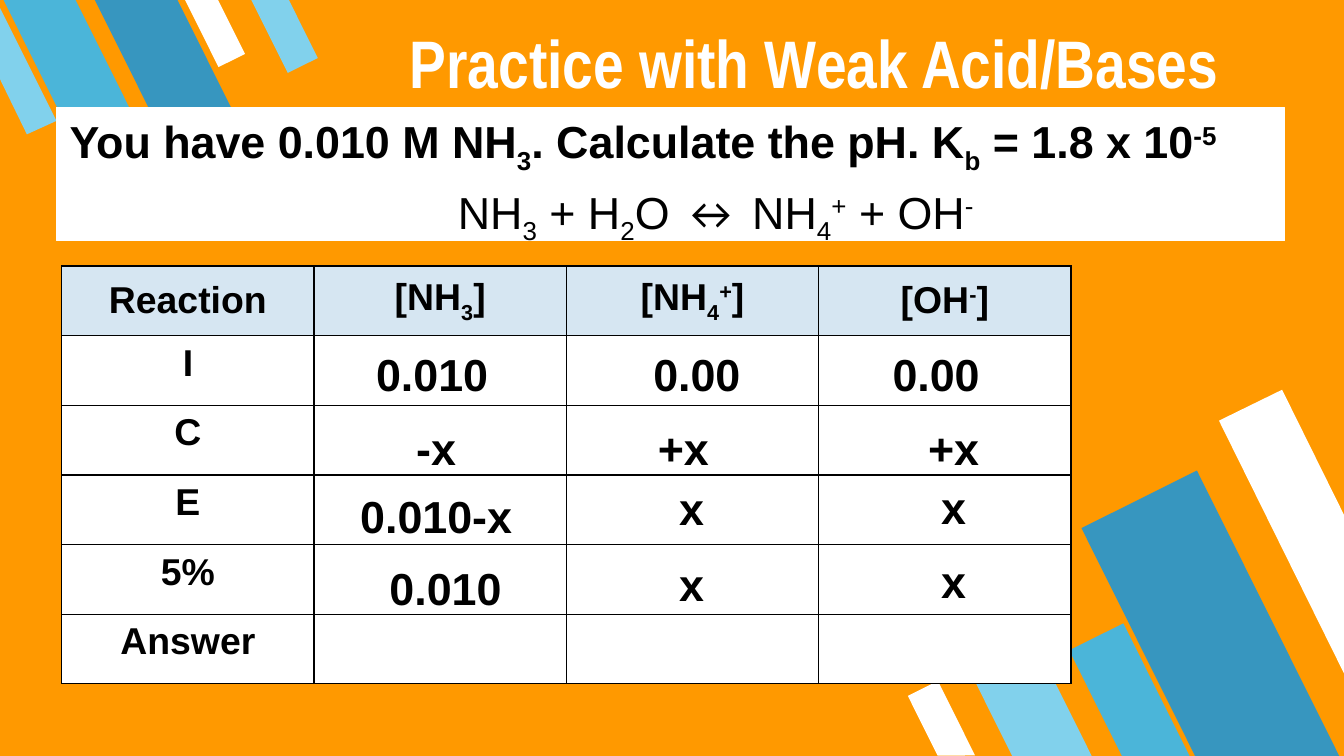
from lxml import etree
from pptx import Presentation
from pptx import util as u
from pptx.dml import color
from pptx.enum import shapes, text
from pptx.oxml import ns

COLORS = {
    "background": "FF9900", "white": "FFFFFF", "black": "000000",
    "header": "D6E6F2", "light": "81D1EC", "medium": "4BB5D9", "dark": "3796BF",
}
BODY = {"name": "Arial", "size": u.Pt(24), "bold": True}
PLAIN = {**BODY, "bold": False}
LABEL = {**BODY, "size": u.Pt(20)}
TITLE = {"name": "Arial Narrow", "size": u.Pt(36), "bold": True}
SUB, SUPER = -25, 30

QUESTION = [("You have 0.010 M NH", 0), ("3", SUB), (". Calculate the pH. K", 0),
            ("b", SUB), (" = 1.8 x 10", 0), ("-5", SUPER)]
EQUATION = [("NH", 0), ("3", SUB), (" + H", 0), ("2", SUB), ("O ", 0),
            ("↔", 0, "Calibri"), (" NH", 0), ("4", SUB), ("+", SUPER),
            (" + OH", 0), ("-", SUPER)]
HEADERS = [
    [("Reaction", 0)],
    [("[NH", 0), ("3", SUB), ("]", 0)],
    [("[NH", 0), ("4", SUB), ("+", SUPER), ("]", 0)],
    [("[OH", 0), ("-", SUPER), ("]", 0)],
]
ROW_LABELS = ["I", "C", "E", "5%", "Answer"]
ENTRIES = [
    [("0.010", 1.98, 0.55), ("0.00", 3.95, 0.55), ("0.00", 5.73, 0.55)],
    [("-x", 2.01, 1.1), ("+x", 3.85, 1.1), ("+x", 5.86, 1.1)],
    [("0.010-x", 2.01, 1.61), ("x", 3.91, 1.55), ("x", 5.86, 1.54)],
    [("0.010", 2.08, 2.14), ("x", 3.91, 2.11), ("x", 5.86, 2.09)],
]
LOWER_BARS = [
    (0.45, 1.6, 0.53, 1.32, "light"), (1.65, 0.69, 0.96, 2.39, "dark"),
    (1.3, 1.78, 0.45, 1.11, "medium"), (0, 2.19, 0.25, 0.62, "white"),
]
LOWER_EDGE = [(2.66, 0), (2.19, 0.23), (3.12, 2.11), (3.12, 0.93)]
UPPER_BARS = [
    (1.49, -0.08, 0.22, 0.56, "white"), (0.26, -0.18, 0.48, 1.18, "medium"),
    (0.98, -0.2, 0.55, 1.37, "dark"), (1.99, -0.1, 0.25, 0.62, "light"),
]
UPPER_EDGE = [(0.2, 1), (0.42, 0.9), (0, 0.06), (0, 0.59)]


def rgb(name):
    return color.RGBColor.from_string(COLORS[name])


def box_of(*lengths):
    return [u.Inches(length) for length in lengths]


def paint(shape, fill):
    shape.shadow.inherit = False
    shape.fill.solid()
    shape.fill.fore_color.rgb = rgb(fill)
    shape.line.fill.background()


def write(paragraph, runs, style, ink="black", align=text.PP_ALIGN.CENTER):
    paragraph.alignment = align
    for words, baseline, *font_name in runs:
        run = paragraph.add_run()
        run.text = words
        for attribute, value in style.items():
            setattr(run.font, attribute, value)
        run.font.color.rgb = rgb(ink)
        if font_name:
            run.font.name = font_name[0]
        if baseline:
            run._r.get_or_add_rPr().set("baseline", str(baseline * 1000))


def add_stripes(slide, left, top, rotation, bars, edge, edge_fill):
    for x, y, width, height, fill in bars:
        bar = slide.shapes.add_shape(
            shapes.MSO_SHAPE.FLOWCHART_MANUAL_INPUT,
            *box_of(left + x, top + y, width, height))
        bar.rotation = rotation
        bar._element.spPr.xfrm.set("flipH", "1")
        paint(bar, fill)
    points = [box_of(left + x, top + y) for x, y in edge]
    builder = slide.shapes.build_freeform(*points[0])
    builder.add_line_segments(points[1:], close=True)
    paint(builder.convert_to_shape(), edge_fill)


def add_title(slide, left, top, width, height):
    title = slide.shapes.title
    title.left, title.top, title.width, title.height = box_of(left, top, width, height)
    frame = title.text_frame
    frame.word_wrap = True
    frame.auto_size = text.MSO_AUTO_SIZE.NONE
    frame.vertical_anchor = text.MSO_ANCHOR.BOTTOM
    margins = {"left": 0.1, "top": 0.1, "right": 0.1, "bottom": 0.04}
    for side, margin in margins.items():
        setattr(frame, f"margin_{side}", u.Inches(margin))
    write(frame.paragraphs[0], [("Practice with Weak Acid/Bases", 0)],
          TITLE, "white", text.PP_ALIGN.LEFT)


def add_question(slide, left, top, width, height):
    panel = slide.shapes.add_shape(
        shapes.MSO_SHAPE.RECTANGLE, *box_of(left, top, width, height))
    paint(panel, "white")
    panel.line.color.rgb = rgb("white")
    panel.line.width = u.Pt(0.75)
    frame = panel.text_frame
    frame.word_wrap = True
    frame.vertical_anchor = text.MSO_ANCHOR.TOP
    question, equation = frame.paragraphs[0], frame.add_paragraph()
    for paragraph, indent in ((question, -0.67), (equation, 0)):
        properties = paragraph._p.get_or_add_pPr()
        properties.set("marL", str(u.Inches(0.67)))
        properties.set("indent", str(u.Inches(indent)))
    write(question, QUESTION, BODY, align=text.PP_ALIGN.LEFT)
    equation.space_before = u.Pt(5)
    write(equation, EQUATION, PLAIN)


def format_cell(cell, fill):
    properties = cell._tc.get_or_add_tcPr()
    for side in ("lnL", "lnR", "lnT", "lnB"):
        border = etree.SubElement(properties, ns.qn(f"a:{side}"), w=str(u.Pt(0.75)))
        solid = etree.SubElement(border, ns.qn("a:solidFill"))
        etree.SubElement(solid, ns.qn("a:srgbClr"), val=COLORS["black"])
    cell.fill.solid()
    cell.fill.fore_color.rgb = rgb(fill)


def add_reaction_table(slide, left, top, width, height):
    blanks = [[]] * 3
    rows = [HEADERS] + [[[(label, 0)]] + blanks for label in ROW_LABELS]
    table = slide.shapes.add_table(
        len(rows), len(HEADERS), *box_of(left, top, width, height)).table
    for row_index, row in enumerate(rows):
        for column_index, runs in enumerate(row):
            cell = table.cell(row_index, column_index)
            format_cell(cell, "white" if row_index else "header")
            if not row_index:
                cell.vertical_anchor = text.MSO_ANCHOR.MIDDLE
            write(cell.text_frame.paragraphs[0], runs, LABEL)
    for row in ENTRIES:
        for words, x, y in row:
            entry = slide.shapes.add_textbox(*box_of(left + x, top + y, 1.55, 0.5))
            entry.text_frame.word_wrap = True
            write(entry.text_frame.paragraphs[0], [(words, 0)], BODY)


def main():
    presentation = Presentation()
    presentation.slide_width = u.Inches(10)
    presentation.slide_height = u.Inches(10 * 9 / 16)
    slide = presentation.slides.add_slide(presentation.slide_layouts[5])
    slide.background.fill.solid()
    slide.background.fill.fore_color.rgb = rgb("background")
    add_stripes(slide, 6.88, 2.9, 153.5, LOWER_BARS, LOWER_EDGE, "white")
    add_stripes(slide, 0, 0, 333.5, UPPER_BARS, UPPER_EDGE, "light")
    add_title(slide, 2.95, 0.06, 7.05, 0.74)
    add_question(slide, 0.42, 0.8, 9.14, 0.99)
    add_reaction_table(slide, 0.46, 1.98, 7.51, 3.11)
    presentation.save("out.pptx")


if __name__ == "__main__":
    main()
